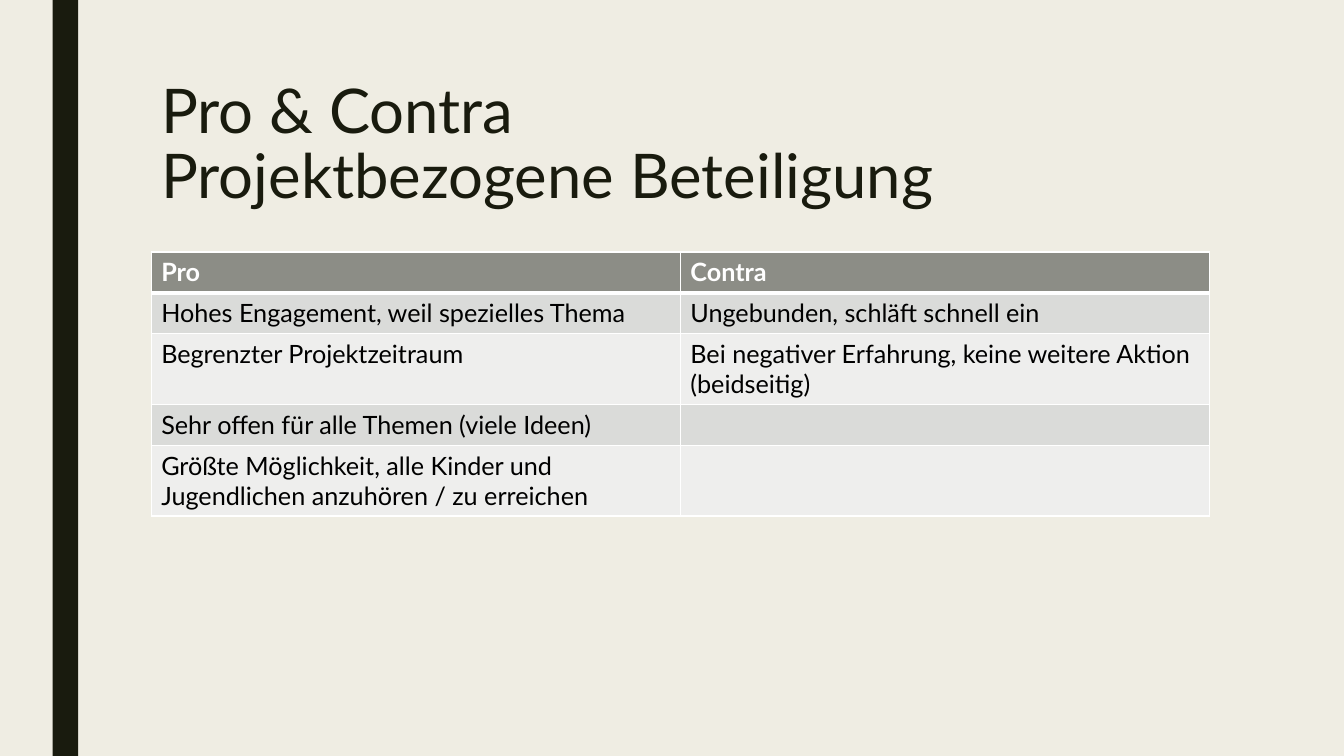
from lxml import etree
from pptx import Presentation
from pptx.dml.color import RGBColor
from pptx.enum.shapes import MSO_SHAPE
from pptx.enum.text import MSO_ANCHOR, PP_ALIGN
from pptx.oxml.ns import qn
from pptx.util import Cm, Pt

RECTANGLE = MSO_SHAPE.RECTANGLE
TOP = MSO_ANCHOR.TOP
LEFT = PP_ALIGN.LEFT
TITLE_ONLY = 5
FONT = "Lato"
COLORS = {
    "background": "EFEDE3",
    "dark": "191B0E",
    "header": "8C8D86",
    "odd": "DADBD9",
    "even": "EEEEED",
    "white": "FFFFFF",
    "black": "000000",
}
TITLE = "Pro & Contra\nProjektbezogene Beteiligung"
ARGUMENTS = [
    ("Pro", "Contra"),
    ("Hohes Engagement, weil spezielles Thema", "Ungebunden, schläft schnell ein"),
    ("Begrenzter Projektzeitraum",
     "Bei negativer Erfahrung, keine weitere Aktion (beidseitig)"),
    ("Sehr offen für alle Themen (viele Ideen)", ""),
    ("Größte Möglichkeit, alle Kinder und Jugendlichen anzuhören / zu erreichen", ""),
]
ROW_HEIGHTS = [Cm(1.03), Cm(1.03), Cm(1.78), Cm(1.03), Cm(1.78)]


def rgb(name):
    """Return the named palette colour."""
    return RGBColor.from_string(COLORS[name])


def paint(fill, color):
    """Make a fill solid in a palette colour."""
    fill.solid()
    fill.fore_color.rgb = rgb(color)


def write(frame, text, size=18, color="black", bold=False, spacing=None):
    """Write one formatted paragraph into a text frame."""
    frame.word_wrap = True
    paragraph = frame.paragraphs[0]
    paragraph.text = text
    paragraph.alignment = LEFT
    paragraph.line_spacing = spacing
    for run in paragraph.runs:
        run.font.name = FONT
        run.font.size = Pt(size)
        run.font.bold = bold
        run.font.color.rgb = rgb(color)


def set_borders(cell, **widths):
    """Draw white cell borders with the given widths in points."""
    properties = cell._tc.get_or_add_tcPr()
    for position, side in enumerate("LRTB"):
        line = etree.Element(qn(f"a:ln{side}"), w=str(Pt(widths.get(side, 1))))
        fill = etree.SubElement(line, qn("a:solidFill"))
        etree.SubElement(fill, qn("a:srgbClr"), val=COLORS["white"])
        properties.insert(position, line)


def add_side_bar(slide, left, top, width, height):
    """Add the dark vertical bar at the left edge."""
    bar = slide.shapes.add_shape(RECTANGLE, left, top, width, height)
    bar.shadow.inherit = False
    bar.line.fill.background()
    paint(bar.fill, "dark")


def place_title(slide, left, top, width, height):
    """Move and format the title placeholder."""
    title = slide.shapes.title
    title.left, title.top, title.width, title.height = left, top, width, height
    title.text_frame.vertical_anchor = TOP
    write(title.text_frame, TITLE, size=44, color="dark", spacing=0.89)


def add_arguments(slide, left, top, width):
    """Add the table of arguments for and against."""
    table = slide.shapes.add_table(
        len(ARGUMENTS), len(ARGUMENTS[0]), left, top, width, sum(ROW_HEIGHTS)
    ).table
    for row_index, arguments in enumerate(ARGUMENTS):
        table.rows[row_index].height = ROW_HEIGHTS[row_index]
        is_header = row_index == 0
        band = "header" if is_header else ("even", "odd")[row_index % 2]
        for column, argument in enumerate(arguments):
            cell = table.cell(row_index, column)
            write(cell.text_frame, argument, bold=is_header,
                  color="white" if is_header else "black")
            paint(cell.fill, band)
            set_borders(cell, T=3 if row_index == 1 else 1, B=3 if is_header else 1)


def main():
    """Build and save the slide."""
    deck = Presentation()
    deck.slide_width, deck.slide_height = Cm(33.87), Cm(19.05)
    slide = deck.slides.add_slide(deck.slide_layouts[TITLE_ONLY])
    paint(slide.background.fill, "background")
    left, width = Cm(3.81), Cm(26.67)
    add_side_bar(slide, Cm(1.33), 0, Cm(0.64), deck.slide_height)
    place_title(slide, left, Cm(1.9), width, Cm(4.13))
    add_arguments(slide, left, Cm(6.35), width)
    deck.save("out.pptx")


if __name__ == "__main__":
    main()
